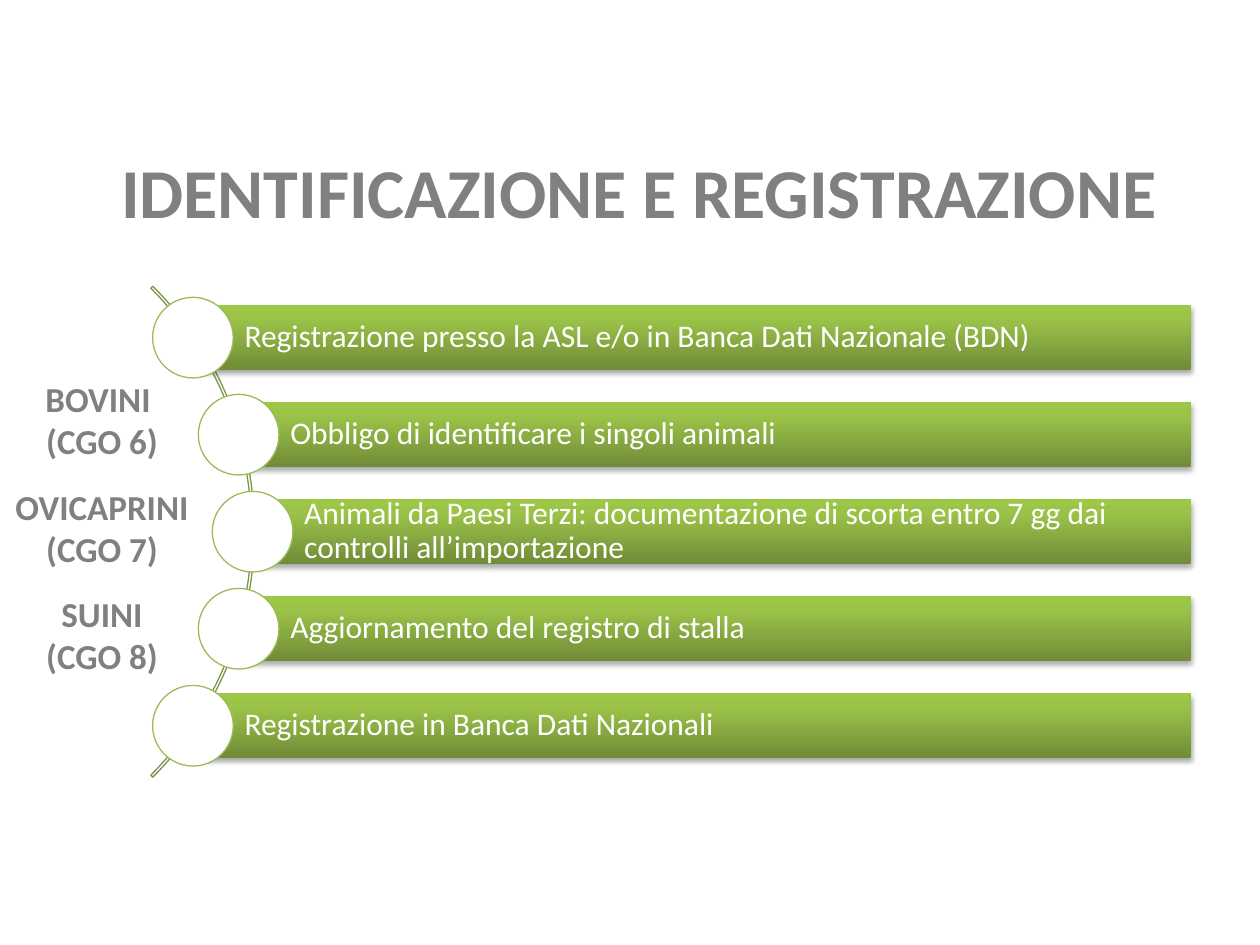
from math import sqrt

from pptx import Presentation
from pptx.dml.color import RGBColor as RGB
from pptx.enum.shapes import MSO_SHAPE as SHAPE
from pptx.enum.text import MSO_ANCHOR as ANCHOR, MSO_AUTO_SIZE as AUTO, PP_ALIGN as ALIGN
from pptx.oxml import parse_xml
from pptx.oxml.ns import nsdecls
from pptx.util import Inches, Pt

THEME = dict(
    font="Calibri", title=40, label=20, body=18,
    grey="808080", white="FFFFFF", ring="9BBB59", arc="7C9647",
    gradient=((0, "708C38"), (80, "9BC348"), (100, "9DC746")),
)
STEPS = (
    "Registrazione presso la ASL e/o in Banca Dati Nazionale (BDN)",
    "Obbligo di identificare i singoli animali",
    "Animali da Paesi Terzi: documentazione di scorta entro 7 gg dai controlli all’importazione",
    "Aggiornamento del registro di stalla",
    "Registrazione in Banca Dati Nazionali",
)
SPECIES = ("BOVINI ", "(CGO 6)", "OVICAPRINI", "(CGO 7)", "SUINI", "(CGO 8)")

# Rows are centred on MID_Y; the circles sit on an arc around (ARC_X, MID_Y)
WIDTH, HEIGHT = 10, 7.5
MID_Y, ROW = 4.22, 0.77
ARC_X, ARC_R, CIRCLE_R = -0.735, 2.755, 0.32
BAR_H, BAR_RIGHT = ROW * 2 / 3, 9.45


def write(s, lines, size, color, bold=False, align=ALIGN.LEFT, spacing=1.0, group=1, gap=0):
    """Fill a shape with paragraphs; a gap in points precedes each new group of lines."""
    tf = s.text_frame
    tf.word_wrap, tf.auto_size, tf.vertical_anchor = True, AUTO.NONE, ANCHOR.MIDDLE
    for i, line in enumerate(lines):
        p = tf.add_paragraph() if i else tf.paragraphs[0]
        p.alignment, p.line_spacing = align, spacing
        if i and i % group == 0:
            p.space_before = Pt(gap)
        r = p.add_run()
        r.text = line
        r.font.name, r.font.size, r.font.bold = THEME["font"], Pt(size), bold
        r.font.color.rgb = RGB.from_string(color)


def add_shape(kind, x, y, w, h, fill=None, line=None):
    s = shapes.add_shape(kind, Inches(x), Inches(y), Inches(w), Inches(h))
    s.shadow.inherit = False
    s.fill.background()
    if fill:
        s.fill.solid()
        s.fill.fore_color.rgb = RGB.from_string(fill)
    if line:
        s.line.color.rgb, s.line.width = RGB.from_string(line), Pt(0.75)
    else:
        s.line.fill.background()
    return s


prs = Presentation()
prs.slide_width, prs.slide_height = Inches(WIDTH), Inches(HEIGHT)
slide = prs.slides.add_slide(prs.slide_layouts[5])
shapes = slide.shapes

title = shapes.title
title.left, title.top = Inches(0.057 * WIDTH), Inches(0.101 * HEIGHT)
title.width, title.height = Inches(0.9 * WIDTH), Inches(0.157 * HEIGHT)
write(title, ["IDENTIFICAZIONE E REGISTRAZIONE"], THEME["title"], THEME["grey"],
      bold=True, align=ALIGN.CENTER, spacing=1.5)

arc = add_shape(SHAPE.BLOCK_ARC, ARC_X - ARC_R, MID_Y - ARC_R, 2 * ARC_R, 2 * ARC_R,
                line=THEME["arc"])
for i, value in enumerate((189, 27, 0.004)):
    arc.adjustments[i] = value

stops = "".join(f'<a:gs pos="{pos * 1000}"><a:srgbClr val="{color}"/></a:gs>'
                for pos, color in THEME["gradient"])
for i, step in enumerate(STEPS):
    dy = (i - len(STEPS) // 2) * ROW
    x, y = ARC_X + sqrt((ARC_R - 0.015) ** 2 - dy ** 2), MID_Y + dy
    bar = add_shape(SHAPE.RECTANGLE, x, y - BAR_H / 2, BAR_RIGHT - x, BAR_H)
    props = bar._element.spPr
    props.replace(props.find("{*}noFill"), parse_xml(
        f'<a:gradFill {nsdecls("a")} rotWithShape="1"><a:gsLst>{stops}</a:gsLst>'
        '<a:lin ang="16200000" scaled="0"/></a:gradFill>'))
    props.find("{*}effectLst").append(parse_xml(
        f'<a:outerShdw {nsdecls("a")} blurRad="{Pt(3.1)}" dist="{Pt(1.8)}" dir="5400000" '
        'rotWithShape="0"><a:srgbClr val="000000"><a:alpha val="35000"/></a:srgbClr>'
        '</a:outerShdw>'))
    write(bar, [step], THEME["body"], THEME["white"], spacing=0.9)
    tf = bar.text_frame
    tf.margin_left = Inches(0.41)
    tf.margin_top = tf.margin_right = tf.margin_bottom = Inches(0.05)
    add_shape(SHAPE.OVAL, x - CIRCLE_R, y - CIRCLE_R, 2 * CIRCLE_R, 2 * CIRCLE_R,
              fill=THEME["white"], line=THEME["ring"])

species = shapes.add_textbox(0, Inches(0.343 * HEIGHT), Inches(0.162 * WIDTH),
                             Inches(0.43 * HEIGHT))
write(species, SPECIES, THEME["label"], THEME["grey"], bold=True, align=ALIGN.CENTER,
      group=2, gap=13.4)

prs.save("out.pptx")
